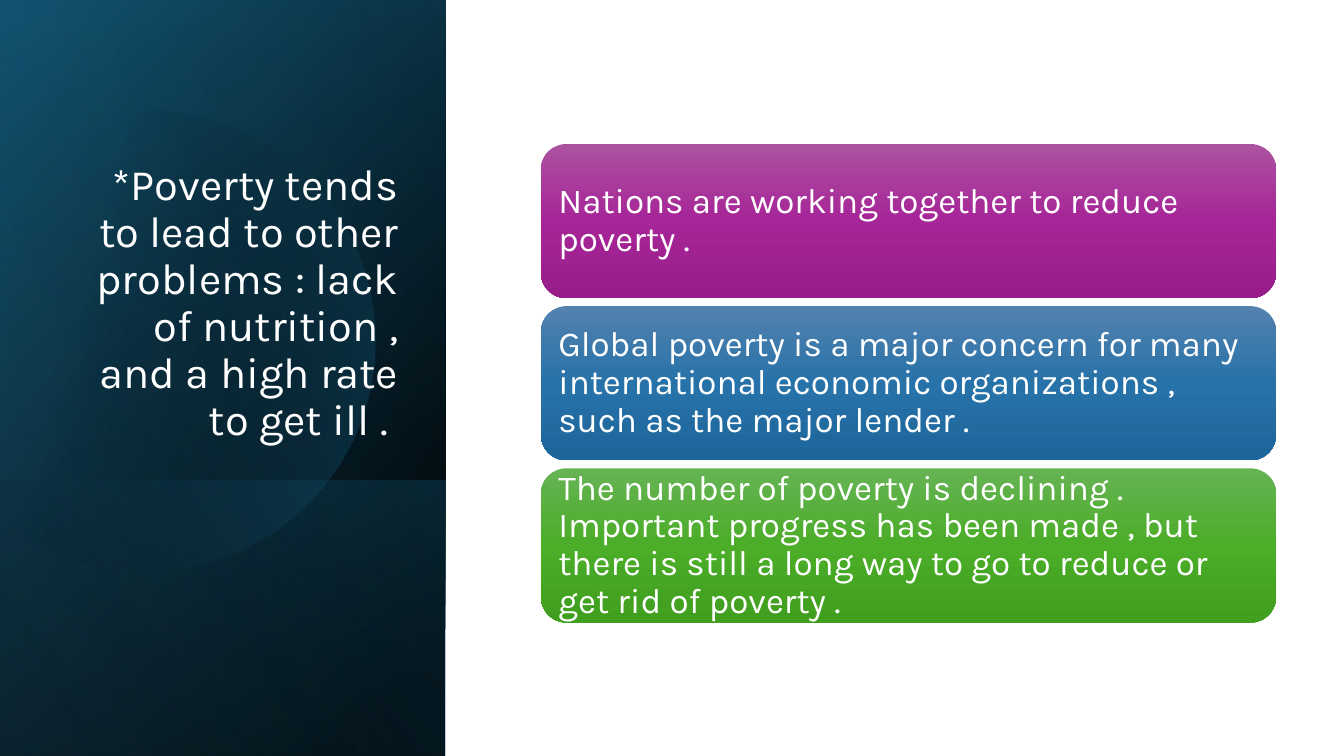
from dataclasses import dataclass

from lxml.etree import SubElement
from pptx import Presentation
from pptx.dml.color import RGBColor
from pptx.enum.shapes import MSO_SHAPE
from pptx.enum.text import MSO_ANCHOR, PP_ALIGN
from pptx.oxml.ns import qn
from pptx.util import Inches, Pt

WHITE = RGBColor(0xFF, 0xFF, 0xFF)
BLACK = RGBColor(0x00, 0x00, 0x00)
DEEP_TEAL = RGBColor(0x10, 0x48, 0x62)
TEAL = RGBColor(0x15, 0x60, 0x82)
SKY = RGBColor(0x46, 0xB1, 0xE1)
PURPLES = (RGBColor(0xAC, 0x53, 0xA0), RGBColor(0xA6, 0x25, 0x98), RGBColor(0x99, 0x1C, 0x8B))
BLUES = (RGBColor(0x53, 0x82, 0xAF), RGBColor(0x27, 0x72, 0xA9), RGBColor(0x1D, 0x66, 0x9C))
GREENS = (RGBColor(0x66, 0xB3, 0x54), RGBColor(0x4B, 0xAD, 0x28), RGBColor(0x40, 0x9F, 0x1E))

FONT = "Karla"
SLIDE_W, SLIDE_H = Inches(13.33), Inches(7.5)
PANEL_W = 33.15
CARD_LEFT, CARD_TOP = 40.25, 19.05
CARD_W, CARD_H, CARD_PITCH = 54.7, 20.4, 21.45


@dataclass(frozen=True)
class Stop:
    pos: int
    color: RGBColor
    alpha: int = 100


@dataclass(frozen=True)
class Layer:
    top: float
    height: float
    angle: int
    stops: tuple[Stop, ...]


@dataclass(frozen=True)
class Card:
    text: str
    colors: tuple[RGBColor, ...]


BASE_LAYERS = (
    Layer(0, 100, 50, (Stop(8, BLACK), Stop(100, DEEP_TEAL))),
    Layer(0, 100, 30, (Stop(0, BLACK, 0), Stop(99, TEAL, 46))),
    Layer(63.5, 36.5, 130, (Stop(2, TEAL, 29), Stop(100, BLACK, 30))),
)
GLOW_STOPS = (Stop(29, BLACK, 0), Stop(100, TEAL, 43))
SHEEN = Layer(0, 100, 120, (Stop(0, BLACK, 0), Stop(99, SKY, 11)))

GLOW_RIGHT = (
    ((11.18, 14.67), (18.45, 14.93), (25.13, 23.6), (27.23, 36.67)),
    ((27.23, 36.67), (29.85, 52.93), (24.6, 69.73), (15.53, 74.4)),
    ((15.53, 74.4), (9.83, 77.33), (3.98, 74.8), (-0.23, 68.53)),
)
GLOW_EDGE = [(-1.13, 67.07), (-1.13, 23.33)]
GLOW_LEFT = (
    ((0, 21.47), (1.73, 18.93), (3.75, 17.07), (6, 15.87)),
    ((6, 15.87), (7.73, 15.07), (9.45, 14.67), (11.18, 14.67)),
)

TITLE = ("*Poverty tends to lead to other problems : lack of nutrition , "
         "and a high rate to get ill . ")
CARDS = (
    Card("Nations are working together to reduce poverty .", PURPLES),
    Card("Global poverty is a major concern for many international economic "
         "organizations , such as the major lender .", BLUES),
    Card("The number of poverty is declining . Important progress has been made , "
         "but there is still a long way to go to reduce or get rid of poverty .", GREENS),
)


def across(share: float) -> int:
    return round(SLIDE_W * share / 100)


def down(share: float) -> int:
    return round(SLIDE_H * share / 100)


def paint(sp, stops: tuple[Stop, ...], angle: int) -> None:
    sp.shadow.inherit = False
    sp.line.fill.background()
    sp.fill.gradient()
    grad = sp.element.spPr.find(qn("a:gradFill"))
    grad.clear()
    grad.set("rotWithShape", "1")
    gs_list = SubElement(grad, qn("a:gsLst"))
    for stop in stops:
        gs = SubElement(gs_list, qn("a:gs"), pos=str(stop.pos * 1000))
        color = SubElement(gs, qn("a:srgbClr"), val=str(stop.color))
        if stop.alpha < 100:
            SubElement(color, qn("a:alpha"), val=str(stop.alpha * 1000))
    SubElement(grad, qn("a:lin"), ang=str(angle * 60000), scaled="0")


def add_layer(shapes, layer: Layer) -> None:
    w, h = across(PANEL_W), down(layer.height)
    left, top = (w - h) // 2, down(layer.top) + (h - w) // 2
    sp = shapes.add_shape(MSO_SHAPE.RECTANGLE, left, top, h, w)
    sp.rotation = 90
    sp.element.spPr.find(qn("a:xfrm")).set("flipH", "1")
    paint(sp, layer.stops, layer.angle)


def curve_points(curves, steps: int = 24) -> list[tuple[float, float]]:
    points = []
    for curve in curves:
        for i in range(steps + 1):
            t = i / steps
            weights = ((1 - t) ** 3, 3 * t * (1 - t) ** 2, 3 * t * t * (1 - t), t ** 3)
            points.append(tuple(sum(k * p[axis] for k, p in zip(weights, curve))
                                for axis in (0, 1)))
    return points


def add_glow(shapes) -> None:
    outline = curve_points(GLOW_RIGHT) + GLOW_EDGE + curve_points(GLOW_LEFT)
    points = [(across(x), down(y)) for x, y in outline]
    builder = shapes.build_freeform(*points[0])
    builder.add_line_segments(points[1:], close=True)
    paint(builder.convert_to_shape(), GLOW_STOPS, 14)


def write(tf, text: str, *, size: int, align: PP_ALIGN, anchor: MSO_ANCHOR) -> None:
    tf.word_wrap = True
    tf.vertical_anchor = anchor
    p = tf.paragraphs[0]
    p.alignment = align
    p.line_spacing = 0.9
    r = p.add_run()
    r.text = text
    r.font.name = FONT
    r.font.size = Pt(size)
    r.font.color.rgb = WHITE


def add_title(shapes) -> None:
    sp = shapes.add_textbox(across(4.8), down(24.53), across(25.55), down(34.93))
    write(sp.text_frame, TITLE, size=31, align=PP_ALIGN.RIGHT, anchor=MSO_ANCHOR.BOTTOM)


def add_card(shapes, row: int, card: Card) -> None:
    sp = shapes.add_shape(MSO_SHAPE.ROUNDED_RECTANGLE, across(CARD_LEFT),
                          down(CARD_TOP + row * CARD_PITCH), across(CARD_W), down(CARD_H))
    paint(sp, tuple(Stop(50 * i, color) for i, color in enumerate(card.colors)), 90)
    tf = sp.text_frame
    tf.margin_left = tf.margin_right = tf.margin_top = tf.margin_bottom = Inches(0.1)
    write(tf, card.text, size=25, align=PP_ALIGN.LEFT, anchor=MSO_ANCHOR.MIDDLE)


def main() -> None:
    prs = Presentation()
    prs.slide_width, prs.slide_height = SLIDE_W, SLIDE_H
    shapes = prs.slides.add_slide(prs.slide_layouts[6]).shapes
    for layer in BASE_LAYERS:
        add_layer(shapes, layer)
    add_glow(shapes)
    add_layer(shapes, SHEEN)
    add_title(shapes)
    for row, card in enumerate(CARDS):
        add_card(shapes, row, card)
    prs.save("out.pptx")


if __name__ == "__main__":
    main()
